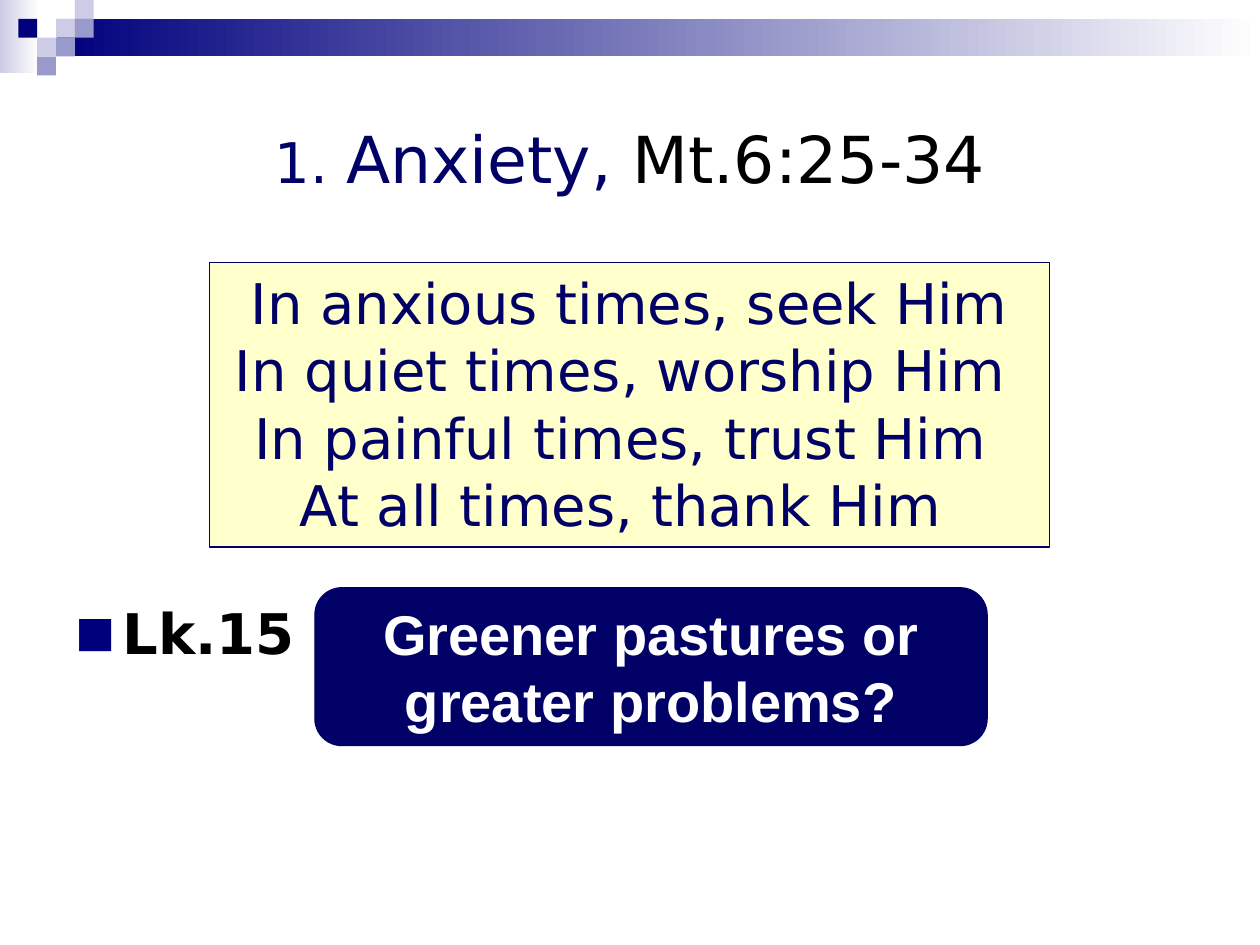
import pptx
import pptx.util
from lxml import etree
from pptx.dml.color import RGBColor
from pptx.enum.shapes import MSO_SHAPE
from pptx.enum.text import MSO_ANCHOR, PP_ALIGN
from pptx.oxml.ns import qn

Cm, Pt = pptx.util.Cm, pptx.util.Pt

NAVY, BLUE, MID, PALE = "000066", "00007D", "9999CC", "CCCCE6"
WHITE, BLACK, CREAM = "FFFFFF", "000000", "FFFFCC"

TITLE = [("1. ", 32, NAVY), ("Anxiety,", 37, NAVY), (" Mt.6:25-34", 37, BLACK)]
POEM = ["In anxious times, seek Him", "In quiet times, worship Him ",
        "In painful times, trust Him ", "At all times, thank Him "]
REFERENCE = "Lk.15"
QUESTION = ["Greener pastures or", "greater problems?"]

# Left, top, width, height in cm, then start colour of a fade to white
BANDS = [((0, 0, 0.79, 1.47), PALE), ((1.14, 0.38, 24.26, 0.76), BLUE)]
# Column and row on the square grid
SQUARES = [(2, 1, PALE), (3, 0, PALE), (3, 1, MID), (1, 2, PALE),
           (0, 1, BLUE), (2, 2, MID), (1, 3, MID)]
SQUARE, GRID_LEFT = 0.38, 0.37


def rgb(code):
    return RGBColor.from_string(code)


def set_font(r, **values):
    values = {"name": "DejaVu Sans", "size": Pt(32), "bold": False, **values}
    r.font.color.rgb = rgb(values.pop("color"))
    for name, value in values.items():
        setattr(r.font, name, value)


def add_box(s, kind, box, fill, line=None):
    sp = s.shapes.add_shape(kind, *map(Cm, box))
    sp.shadow.inherit = False
    sp.fill.solid()
    sp.fill.fore_color.rgb = rgb(fill)
    if line:
        sp.line.color.rgb = rgb(line)
        sp.line.width = Pt(0.75)
    else:
        sp.line.fill.background()
    return sp


def fade_to_white(sp, start):
    sp.fill.gradient()
    sp.fill.gradient_angle = 0
    for stop, color, position in zip(sp.fill.gradient_stops, (start, WHITE), (0, 1)):
        stop.color.rgb = rgb(color)
        stop.position = position


def write_lines(sp, lines, anchor, **font):
    """Centre the lines as one paragraph with line breaks."""
    tf = sp.text_frame
    tf.word_wrap = True
    tf.vertical_anchor = anchor
    p = tf.paragraphs[0]
    p.text = "\v".join(lines)
    p.alignment = PP_ALIGN.CENTER
    for r in p.runs:
        set_font(r, **font)


def add_bullet(p):
    pPr = p._p.get_or_add_pPr()
    pPr.set("marL", str(Cm(0.95)))
    pPr.set("indent", str(Cm(-0.95)))
    color = etree.SubElement(pPr, qn("a:buClr"))
    etree.SubElement(color, qn("a:srgbClr"), val=BLUE)
    etree.SubElement(pPr, qn("a:buSzPct"), val="75000")
    etree.SubElement(pPr, qn("a:buFont"), typeface="DejaVu Sans")
    etree.SubElement(pPr, qn("a:buChar"), char="■")


prs = pptx.Presentation()
prs.slide_width, prs.slide_height = Cm(25.4), Cm(19.05)
s = prs.slides.add_slide(prs.slide_layouts[5])

for box, start in BANDS:
    fade_to_white(add_box(s, MSO_SHAPE.RECTANGLE, box, WHITE), start)
for col, row, color in SQUARES:
    box = (GRID_LEFT + col * SQUARE, row * SQUARE, SQUARE, SQUARE)
    add_box(s, MSO_SHAPE.RECTANGLE, box, color)

title = s.shapes.title
title.left, title.top, title.width, title.height = map(Cm, (1.27, 1.27, 22.86, 3.81))
title.text_frame.vertical_anchor = MSO_ANCHOR.MIDDLE
p = title.text_frame.paragraphs[0]
p.alignment = PP_ALIGN.CENTER
for text, size, color in TITLE:
    r = p.add_run()
    r.text = text
    set_font(r, size=Pt(size), color=color)

reference = s.shapes.add_textbox(*map(Cm, (1.27, 11.94, 5, 1.6)))
reference.text_frame.word_wrap = True
p = reference.text_frame.paragraphs[0]
add_bullet(p)
r = p.add_run()
r.text = REFERENCE
set_font(r, bold=True, color=BLACK)

poem = add_box(s, MSO_SHAPE.RECTANGLE, (4.23, 5.29, 16.93, 5.74), CREAM, NAVY)
write_lines(poem, POEM, MSO_ANCHOR.TOP, color=NAVY)

question = add_box(s, MSO_SHAPE.ROUNDED_RECTANGLE, (6.35, 11.85, 13.55, 3.18), NAVY, NAVY)
question.adjustments[0] = 0.17
write_lines(question, QUESTION, MSO_ANCHOR.MIDDLE, name="Arial", bold=True, color=WHITE)

prs.save("out.pptx")
